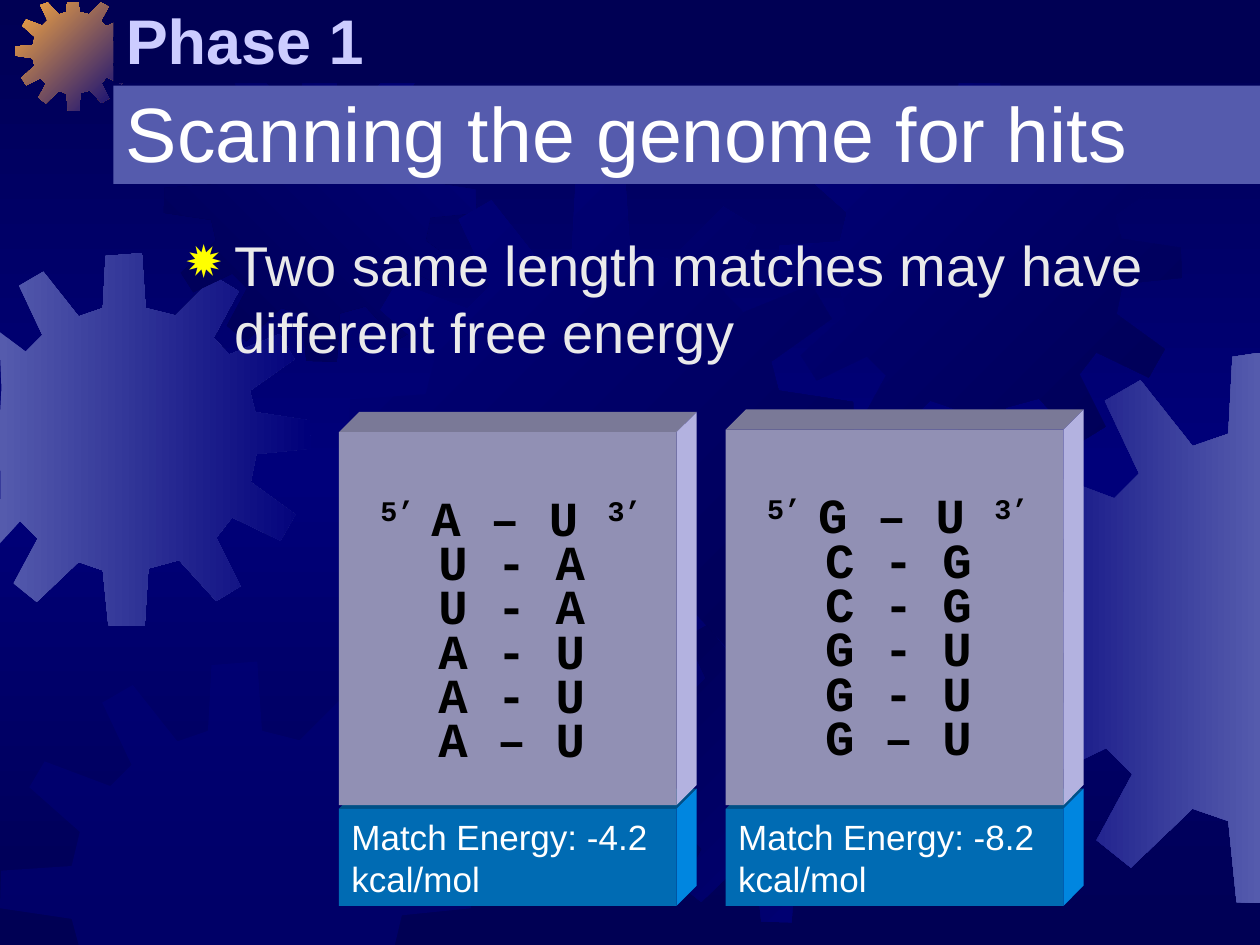
from lxml import etree
from copy import deepcopy
from pptx import Presentation
from pptx.dml.color import RGBColor
from pptx.enum.shapes import MSO_SHAPE
from pptx.enum.text import MSO_ANCHOR, PP_ALIGN
from pptx.oxml.ns import qn
from pptx.util import Inches, Pt

RECTANGLE, LEFT = MSO_SHAPE.RECTANGLE, PP_ALIGN.LEFT
BOTTOM, MIDDLE, TOP = MSO_ANCHOR.BOTTOM, MSO_ANCHOR.MIDDLE, MSO_ANCHOR.TOP
NAVY, BLUE, VIOLET = "000054", "00007A", "555BAD"
WIDTH, HEIGHT = 10, 7.5

deck = Presentation()
deck.slide_width, deck.slide_height = Inches(WIDTH), Inches(HEIGHT)
page = deck.slides.add_slide(deck.slide_layouts[6])
color = RGBColor.from_string


def outline(points, fill):
    """Closed outline; fill is a hex colour or (from, to, clockwise angle)."""
    corners = [(Inches(x), Inches(y)) for x, y in points]
    builder = page.shapes.build_freeform(*corners[0])
    builder.add_line_segments(corners[1:], close=True)
    shape = builder.convert_to_shape()
    shape.shadow.inherit = False
    shape.line.fill.background()
    if isinstance(fill, str):
        shape.fill.solid()
        shape.fill.fore_color.rgb = color(fill)
    else:
        shape.fill.gradient()
        shape.fill.gradient_angle = -fill[2] % 360
        for stop, shade, place in zip(shape.fill.gradient_stops, fill, (0, 1)):
            stop.color.rgb, stop.position = color(shade), place
    return shape


def text_box(left, top, width, height, fill, anchor, lines, size, ink, font="Arial"):
    """Plain rectangle, filled or not, holding lines of text."""
    box = page.shapes.add_shape(RECTANGLE, *map(Inches, (left, top, width, height)))
    box.shadow.inherit = False
    box.line.fill.background()
    if fill:
        box.fill.solid()
        box.fill.fore_color.rgb = color(fill)
    else:
        box.fill.background()
    frame = box.text_frame
    frame.word_wrap, frame.vertical_anchor = True, anchor
    frame.text = "\n".join(lines)
    for para in frame.paragraphs:
        para.alignment = LEFT
        para.font.name, para.font.size = font, Pt(size)
        para.font.color.rgb = color(ink)
    return frame


# Background gradient, dark at both ends
page.background.fill.gradient()
page.background.fill.gradient_angle = 270
stop_list = page.element.find(".//" + qn("a:gsLst"))
stop_list.append(deepcopy(stop_list[-1]))
for stop, shade, place in zip(page.background.fill.gradient_stops,
                              (NAVY, BLUE, NAVY), (0, 0.5, 1)):
    stop.color.rgb, stop.position = color(shade), place

# Twelve-toothed gear: four corners per tooth, one tooth a row
GEAR_SIZE = 4.01
GEAR = [
    (2.55, .67), (2.23, .59), (2.19, 0), (1.8, .03),
    (1.77, .59), (1.51, .68), (1.13, .2), (.87, .35),
    (1.12, .88), (.94, 1.06), (.38, .85), (.25, 1.07),
    (.68, 1.45), (.61, 1.74), (.01, 1.78), (0, 2.1),
    (.61, 2.19), (.67, 2.46), (.22, 2.87), (.38, 3.12),
    (.88, 2.88), (1.07, 3.07), (.81, 3.55), (1.06, 3.75),
    (1.51, 3.32), (1.77, 3.41), (1.83, 4), (2.22, 4.01),
    (2.26, 3.39), (2.59, 3.3), (2.99, 3.74), (3.25, 3.58),
    (2.99, 3.06), (3.16, 2.84), (3.68, 3.09), (3.84, 2.81),
    (3.36, 2.46), (3.42, 2.16), (4.01, 2.1), (4, 1.8),
    (3.41, 1.71), (3.35, 1.48), (3.83, 1.14), (3.67, .87),
    (3.13, 1.09), (2.96, .91), (3.23, .41), (2.97, .25),
]

# Gears, cut off at the slide's edges: left, top, size, fill
gears = [
    (-0.49, 2.01, 2.96, (VIOLET, BLUE, 0)),
    (0.12, -0.04, 0.92, ("FCAB40", BLUE, 45)),
    (1.3, 0.39, 2.48, (NAVY, BLUE, 315)),
    (2.77, 1.39, 4.01, (BLUE, NAVY, 45)),
    (0, 5.25, 3.74, BLUE),
    (4.91, 4.84, 2.48, (NAVY, BLUE, 45)),
    (6.18, 0.53, 3.2, (BLUE, NAVY, 45)),
    (7.82, 2.8, 4.37, (BLUE, VIOLET, 0)),
]
for left, top, size, fill in gears:
    scale = size / GEAR_SIZE
    gear = outline([(min(max(left + x * scale, 0), WIDTH),
                     min(max(top + y * scale, 0.02), HEIGHT)) for x, y in GEAR], fill)
    if isinstance(fill, str):
        tint = gear._element.spPr.find(".//" + qn("a:srgbClr"))
        etree.SubElement(tint, qn("a:alpha"), val="50000")

# Title and subtitle bands
title = text_box(0.9, 0, 9.1, 0.66, NAVY, BOTTOM, ["Phase 1"], 36, "CCCCFF")
title.paragraphs[0].font.bold = True
text_box(0.9, 0.68, 9.1, 0.78, VIOLET, BOTTOM, ["Scanning the genome for hits"], 44, "FFFFFF")

# Bullet
body = text_box(1.38, 1.78, 8.62, 1.29, None, TOP,
                ["Two same length matches may have different free energy"], 32, "EAEAEA")
para = body.paragraphs[0]
para.space_before = Pt(6.4)
props = para._p.get_or_add_pPr()
props.set("marL", str(Inches(0.38)))
props.set("indent", str(-Inches(0.38)))
bullet_color = etree.Element(qn("a:buClr"))
etree.SubElement(bullet_color, qn("a:srgbClr"), val="FFFF00")
bullet_size = etree.Element(qn("a:buSzPct"), val="105000")
bullet = etree.Element(qn("a:buChar"), char="✹")
place = list(props).index(props.find(qn("a:defRPr")))
props[place:place] = [bullet_color, bullet_size, bullet]

# Match cards: a raised block of base pairs on a raised block with the energy
BLOCK, DEPTH, CHARACTER = 2.68, 0.16, 0.23
cards = [
    (2.69, 3.43, "-4.2", ["A – U", "U - A", "U - A", "A - U", "A - U", "A – U"]),
    (5.76, 3.41, "-8.2", ["G – U", "C - G", "C - G", "G - U", "G - U", "G – U"]),
]
for left, top, energy, pairs in cards:
    right = left + BLOCK
    blocks = [
        (6.42, 7.19, "006BB3", "005086", "0086E0", MIDDLE,
         [f"Match Energy: {energy} kcal/mol"], 20, "FFFFFF", "Arial"),
        (top, 6.39, "9190B4", "7A7997", "B3B2E0", TOP, pairs, 28, "000000", "Courier New"),
    ]
    for upper, lower, front, lid, side, anchor, lines, *style in blocks:
        back = upper - DEPTH
        outline([(left, upper), (left + DEPTH, back), (right + DEPTH, back), (right, upper)], lid)
        outline([(right, upper), (right + DEPTH, back),
                 (right + DEPTH, lower - DEPTH), (right, lower)], side)
        frame = text_box(left, upper, BLOCK, lower - upper, front, anchor, lines, *style)

    # Base pairs; the first row carries the strand ends as superscripts
    frame.margin_top = Inches(0.64)
    for row, para in enumerate(frame.paragraphs):
        para.font.bold = True
        para.line_spacing, para.space_before = 0.5, Pt(8.5)
        para._p.get_or_add_pPr().set("marL", str(Inches(CHARACTER * (3 if row else 1))))
    first = frame.paragraphs[0]
    first.runs[0].text = "5’ "
    first.add_run().text = pairs[0] + " "
    first.add_run().text = "3’"
    for span in (first.runs[0], first.runs[2]):
        span._r.get_or_add_rPr().set("baseline", "30000")

deck.save("out.pptx")
